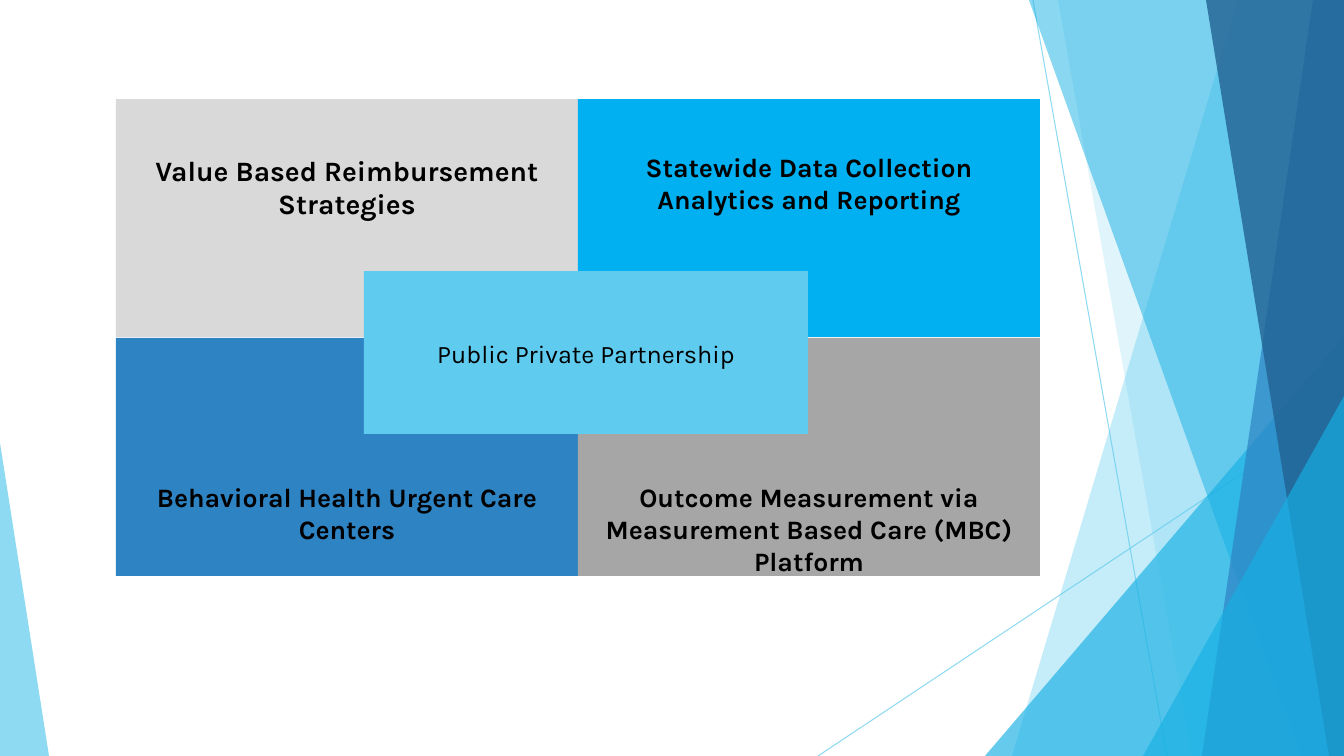
import pptx
import pptx.util
import pptx.dml.color
import pptx.enum.shapes
import pptx.enum.text
import pptx.oxml
import pptx.oxml.ns
from dataclasses import dataclass

SCALE = 914400 / 100.8  # EMU in one px
WIDE, HIGH = 1344, 756


@dataclass(frozen=True)
class Theme:
    font: str = "Karla"
    ink: str = "000000"
    sky: str = "5FCBEF"
    aqua: str = "17B0E4"
    blue: str = "2E83C3"
    navy: str = "226292"
    cyan: str = "00B0F0"
    pale: str = "D9D9D9"
    gray: str = "A6A6A6"
    large: int = 20
    mid: int = 19
    small: int = 18
    hair: float = 0.75


THEME = Theme()


def emu(px):
    return round(px * SCALE)


def rgb(code):
    return pptx.dml.color.RGBColor.from_string(code)


def fade(item, alpha):
    """Set the opacity, in percent, of every colour of a shape or line."""
    for color in item.element.spPr.iter(pptx.oxml.ns.qn("a:srgbClr")):
        node = pptx.oxml.parse_xml(
            f'<a:alpha {pptx.oxml.ns.nsdecls("a")} val="{alpha * 1000}"/>')
        color.append(node)


def paint(shape, color, alpha=100):
    shape.shadow.inherit = False
    shape.fill.solid()
    shape.fill.fore_color.rgb = rgb(color)
    shape.line.fill.background()
    if alpha < 100:
        fade(shape, alpha)


def add_line(slide, *ends):
    line = slide.shapes.add_connector(
        pptx.enum.shapes.MSO_CONNECTOR.STRAIGHT, *map(emu, ends))
    line.line.color.rgb = rgb(THEME.sky)
    line.line.width = pptx.util.Pt(THEME.hair)
    fade(line, 70)
    line.element.spPr.append(pptx.oxml.parse_xml(
        f'<a:effectLst {pptx.oxml.ns.nsdecls("a")}/>'))


def add_shard(slide, top, base, color, alpha):
    """Fill from a slanted left edge to the right side of the slide."""
    pen = slide.shapes.build_freeform(top, 0, scale=SCALE)
    pen.add_line_segments([(WIDE, 0), (WIDE, HIGH), (base, HIGH)], close=True)
    paint(pen.convert_to_shape(), color, alpha)


def add_wedge(slide, box, tip, color, alpha):
    shape = slide.shapes.add_shape(
        pptx.enum.shapes.MSO_SHAPE.ISOSCELES_TRIANGLE, *map(emu, box))
    shape.adjustments[0] = tip
    paint(shape, color, alpha)


def add_panel(slide, box, color, text, size, inset, bold=True):
    shape = slide.shapes.add_shape(
        pptx.enum.shapes.MSO_SHAPE.RECTANGLE, *map(emu, box))
    paint(shape, color)
    frame = shape.text_frame
    frame.word_wrap = True
    frame.vertical_anchor = pptx.enum.text.MSO_ANCHOR.TOP
    frame.margin_top, frame.margin_bottom = emu(inset), 0
    frame.text = text
    para = frame.paragraphs[0]
    para.alignment = pptx.enum.text.PP_ALIGN.CENTER
    font = para.runs[0].font
    font.name, font.size, font.bold = THEME.font, pptx.util.Pt(size), bold
    font.color.rgb = rgb(THEME.ink)


def add_decor(slide):
    add_line(slide, 1033, 0, 1167, HIGH)
    add_line(slide, WIDE, 406, 818, HIGH)
    add_shard(slide, 1238, 1012, THEME.sky, 36)
    add_shard(slide, 1058, 1192, THEME.sky, 20)
    add_wedge(slide, (985, 336, 359, 420), 1, THEME.aqua, 66)
    add_shard(slide, 1029, 1301, THEME.aqua, 50)
    add_shard(slide, 1313, 1202, THEME.blue, 70)
    add_shard(slide, 1206, 1329, THEME.navy, 80)
    add_wedge(slide, (1143, 396, 201, 360), 1, THEME.aqua, 66)
    add_wedge(slide, (0, 443, 49, 313), 0, THEME.sky, 70)


def add_grid(slide):
    left, top, width, height, gap = 116, 99, 462, 238, 1
    panels = [
        (THEME.pale, "Value Based Reimbursement Strategies", THEME.large, 54),
        (THEME.cyan, "Statewide Data Collection Analytics and Reporting",
         THEME.mid, 52),
        (THEME.blue, "Behavioral Health Urgent Care Centers", THEME.mid, 143),
        (THEME.gray,
         "Outcome Measurement via Measurement Based Care (MBC) Platform",
         THEME.mid, 143),
    ]
    for index, panel in enumerate(panels):
        row, col = divmod(index, 2)
        box = (left + col * width, top + row * (height + gap), width, height)
        add_panel(slide, box, *panel)


def main():
    deck = pptx.Presentation()
    deck.slide_width, deck.slide_height = emu(WIDE), emu(HIGH)
    slide = deck.slides.add_slide(deck.slide_layouts[6])
    # Slanted shards at the slide edges
    add_decor(slide)
    # Four panels
    add_grid(slide)
    # Centre panel
    add_panel(slide, (364, 271, 444, 163), THEME.sky,
              "Public Private Partnership", THEME.small, 67, bold=False)
    deck.save("out.pptx")


if __name__ == "__main__":
    main()
